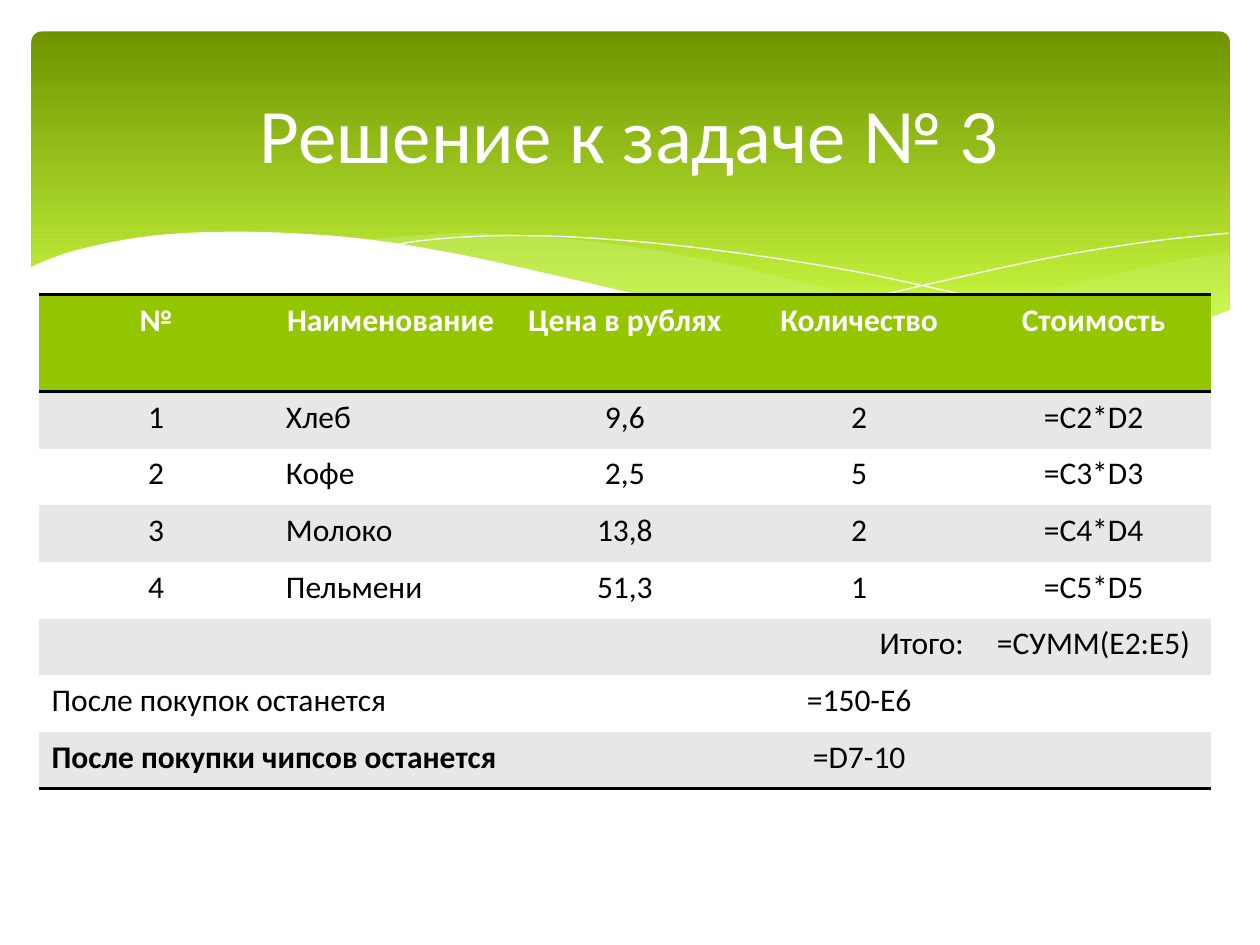
from dataclasses import dataclass
from typing import Optional

import pptx
import pptx.dml.color
import pptx.enum.shapes
import pptx.enum.text
import pptx.oxml
import pptx.oxml.ns
import pptx.util
from lxml import etree

PX = 9144  # EMU per px, 100 px to the inch
FONT = "Calibri"
NO_TABLE_STYLE = "{2D5ABB26-0587-4C30-8999-92F81FD0307C}"

RGB = pptx.dml.color.RGBColor
WHITE = RGB(0xFF, 0xFF, 0xFF)
BLACK = RGB(0x00, 0x00, 0x00)
DARK_GREEN = RGB(0x6F, 0x94, 0x00)
LIME = RGB(0xD0, 0xFF, 0x44)
PALE_LIME = RGB(0xCA, 0xF2, 0x78)
HEADER_GREEN = RGB(0x94, 0xC6, 0x00)
BAND_GREY = RGB(0xE7, 0xE7, 0xE7)

ALIGN = pptx.enum.text.PP_ALIGN
LEFT, CENTER, RIGHT = ALIGN.LEFT, ALIGN.CENTER, ALIGN.RIGHT
qn = pptx.oxml.ns.qn
Point = tuple[float, float]


@dataclass(frozen=True)
class Wave:
    curves: tuple[tuple[Point, ...], ...]  # each curve runs smoothly through its knots
    fill: Optional[RGB] = None
    opacity: int = 100


@dataclass(frozen=True)
class Row:
    texts: tuple[str, ...]
    aligns: tuple[ALIGN, ...]
    span: int = 1  # columns taken by the first cell
    bold_first: bool = False


WAVES = (
    Wave((((976, 200), (935, 207), (891, 216), (832, 230), (753, 248), (661, 265)),
          ((661, 265), (732, 274), (803, 278), (872, 274), (928, 263), (976, 247))),
         PALE_LIME, 29),
    Wave((((893, 273), (807, 260), (706, 240), (629, 222), (555, 205), (465, 191),
           (380, 185), (328, 187), (286, 191)),
          ((286, 191), (362, 203), (449, 222), (566, 248), (665, 266), (748, 276),
           (818, 278), (893, 273))),
         PALE_LIME, 40),
    Wave((((309, 195), (344, 190), (401, 187), (469, 189), (556, 197), (665, 213),
           (760, 233), (831, 251), (907, 272)),)),
    Wave((((613, 257), (672, 241), (748, 223), (836, 204), (910, 192), (975, 185)),)),
    Wave((((977, 246), (920, 265), (863, 274), (809, 277), (744, 274), (668, 265),
           (579, 250), (503, 233), (447, 220), (365, 202), (292, 190), (230, 185),
           (177, 184), (132, 186), (95, 191), (59, 199), (36, 207), (23, 213)),
          ((23, 329), (977, 329))),
         WHITE),
)

ITEM = (CENTER, LEFT, CENTER, CENTER, CENTER)
RESULT = (LEFT, CENTER, CENTER)
ROWS = (
    Row(("№", "Наименование", "Цена в рублях", "Количество", "Стоимость"), (CENTER,) * 5),
    Row(("1", "Хлеб", "9,6", "2", "=C2*D2"), ITEM),
    Row(("2", "Кофе", "2,5", "5", "=C3*D3"), ITEM),
    Row(("3", "Молоко", "13,8", "2", "=C4*D4"), ITEM),
    Row(("4", "Пельмени", "51,3", "1", "=C5*D5"), ITEM),
    Row(("Итого:", "=СУММ(E2:E5)"), (RIGHT, CENTER), span=4),
    Row(("После покупок останется", "=150-E6", ""), RESULT, span=3),
    Row(("После покупки чипсов останется", "=D7-10", ""), RESULT, span=3, bold_first=True),
)
COLUMNS, COLUMN_WIDTH = 5, 186
HEADER_HEIGHT, ROW_HEIGHT = 77, 45


def smooth(knots: tuple[Point, ...], steps: int = 6) -> list[Point]:
    """Points of a Catmull-Rom curve through the knots."""
    ends = (knots[0], *knots, knots[-1])
    points = [knots[0]]
    for a, b, c, d in zip(ends, ends[1:], ends[2:], ends[3:]):
        for step in range(1, steps + 1):
            t = step / steps
            points.append(tuple(
                (2 * q + (r - p) * t + (2 * p - 5 * q + 4 * r - s) * t ** 2
                 + (3 * q - p - 3 * r + s) * t ** 3) / 2
                for p, q, r, s in zip(a, b, c, d)))
    return points


def draw_wave(slide: pptx.slide.Slide, wave: Wave) -> None:
    points = [(round(x * PX), round(y * PX))
              for curve in wave.curves for x, y in smooth(curve)]
    builder = slide.shapes.build_freeform(*points[0])
    builder.add_line_segments(points[1:], close=wave.fill is not None)
    shape = builder.convert_to_shape()
    shape.shadow.inherit = False
    if wave.fill is None:
        shape.fill.background()
        shape.line.color.rgb = WHITE
        shape.line.width = pptx.util.Pt(0)
        return
    shape.fill.solid()
    shape.fill.fore_color.rgb = wave.fill
    shape.line.fill.background()
    if wave.opacity < 100:
        color = shape._element.spPr.find(".//" + qn("a:srgbClr"))
        etree.SubElement(color, qn("a:alpha"), val=str(wave.opacity * 1000))


def draw_banner(slide: pptx.slide.Slide) -> None:
    banner = slide.shapes.add_shape(
        pptx.enum.shapes.MSO_SHAPE.ROUNDED_RECTANGLE, 25 * PX, 25 * PX, 951 * PX, 270 * PX)
    banner.adjustments[0] = 0.03
    banner.shadow.inherit = False
    banner.line.fill.background()
    banner.fill.gradient()
    banner.fill.gradient_angle = 270
    for stop, color, position in zip(banner.fill.gradient_stops, (DARK_GREEN, LIME), (0, 0.9)):
        stop.color.rgb = color
        stop.position = position


def write(frame: pptx.text.text.TextFrame, text: str, align: ALIGN, size: int,
          color: RGB, bold: bool = False) -> None:
    frame.text = text
    paragraph = frame.paragraphs[0]
    paragraph.alignment = align
    for run in paragraph.runs:
        run.font.name = FONT
        run.font.size = pptx.util.Pt(size)
        run.font.bold = bold
        run.font.color.rgb = color


def add_borders(cell: pptx.table._Cell, sides: tuple[str, ...]) -> None:
    for index, side in enumerate(sides):
        border = pptx.oxml.parse_xml(
            f'<a:ln{side} {pptx.oxml.ns.nsdecls("a")} w="25400"><a:solidFill>'
            f'<a:srgbClr val="{BLACK}"/></a:solidFill></a:ln{side}>')
        cell._tc.get_or_add_tcPr().insert(index, border)


def draw_table(slide: pptx.slide.Slide) -> None:
    height = HEADER_HEIGHT + ROW_HEIGHT * (len(ROWS) - 1)
    table = slide.shapes.add_table(len(ROWS), COLUMNS, 31 * PX, 234 * PX,
                                   COLUMNS * COLUMN_WIDTH * PX, height * PX).table
    table._tbl.tblPr.find(qn("a:tableStyleId")).text = NO_TABLE_STYLE
    for column in table.columns:
        column.width = COLUMN_WIDTH * PX

    for index, row in enumerate(ROWS):
        header, last = index == 0, index == len(ROWS) - 1
        table.rows[index].height = (HEADER_HEIGHT if header else ROW_HEIGHT) * PX
        for cell in table.rows[index].cells:
            cell.fill.solid()
            cell.fill.fore_color.rgb = (
                HEADER_GREEN if header else BAND_GREY if index % 2 else WHITE)
            add_borders(cell, ("T", "B") if header else ("B",) if last else ())
        if row.span > 1:
            table.cell(index, 0).merge(table.cell(index, row.span - 1))
        columns = (0, *range(row.span, COLUMNS))
        for column, text, align in zip(columns, row.texts, row.aligns):
            write(table.cell(index, column).text_frame, text, align, 18,
                  WHITE if header else BLACK,
                  bold=header or (row.bold_first and column == 0))


def main() -> None:
    presentation = pptx.Presentation()
    presentation.slide_width, presentation.slide_height = 1000 * PX, 750 * PX
    slide = presentation.slides.add_slide(presentation.slide_layouts[6])

    # Green banner with waves
    draw_banner(slide)
    for wave in WAVES:
        draw_wave(slide, wave)

    # Shopping table
    draw_table(slide)

    # Title
    title = slide.shapes.add_textbox(50 * PX, 37 * PX, 900 * PX, 137 * PX).text_frame
    title.word_wrap = True
    title.vertical_anchor = pptx.enum.text.MSO_ANCHOR.MIDDLE
    write(title, "Решение к задаче № 3", CENTER, 44, WHITE)

    presentation.save("out.pptx")


if __name__ == "__main__":
    main()
